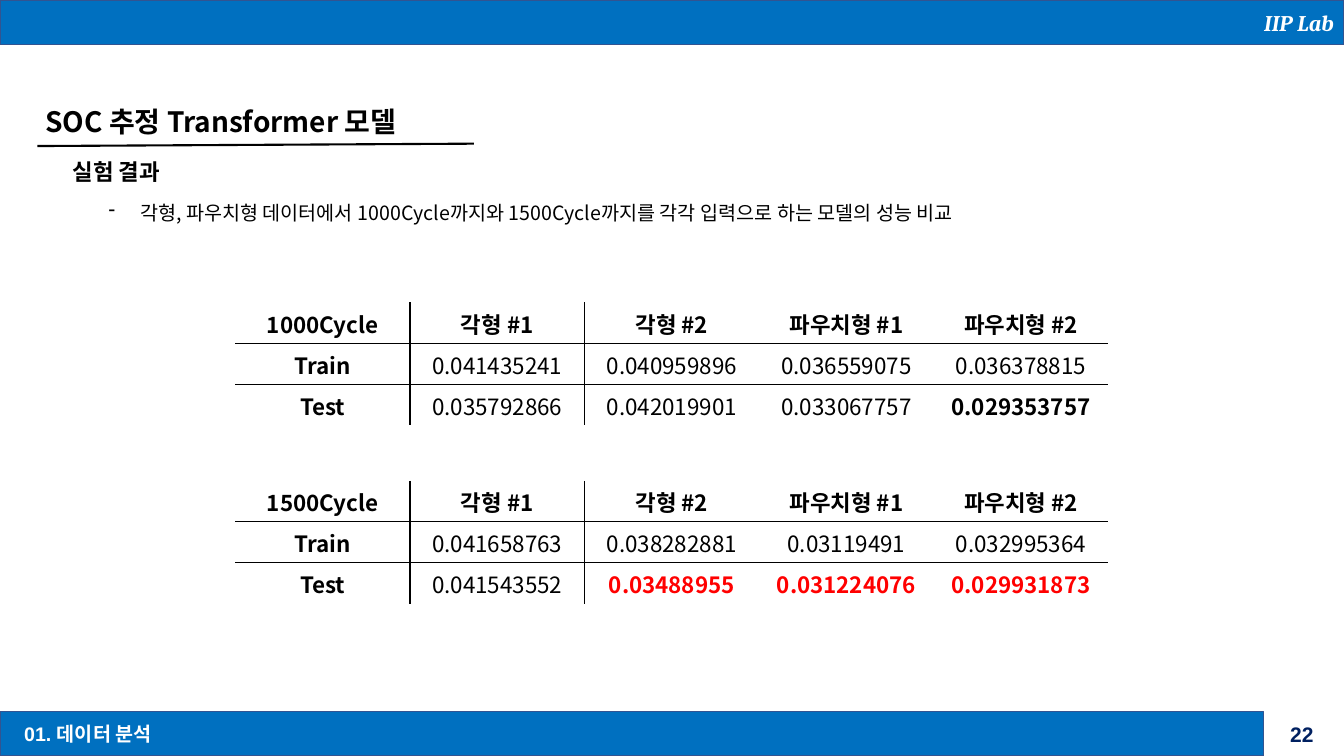
import dataclasses

import pptx
import pptx.dml.color
import pptx.enum.shapes
import pptx.enum.text
import pptx.oxml.ns
import pptx.util
from lxml import etree

Cm = pptx.util.Cm
Align = pptx.enum.text.PP_ALIGN
qn = pptx.oxml.ns.qn


@dataclasses.dataclass(frozen=True)
class Theme:
    """Colours, fonts and type sizes of the slide."""
    blue: str = "0070C0"
    edge: str = "325491"
    navy: str = "002060"
    white: str = "FFFFFF"
    black: str = "000000"
    red: str = "FF0000"
    body: str = "Noto Sans CJK KR"
    footer: str = "Arial"
    header: str = "Cambria"
    title_size: int = 20
    heading_size: int = 16
    number_size: int = 15
    text_size: int = 14


T = Theme()


def rgb(color):
    """Return the colour object for a hex string."""
    return pptx.dml.color.RGBColor.from_string(color)


def write(tf, text, size, color=T.black, font=T.body, bold=True, italic=False,
          align=Align.LEFT):
    """Add one styled run to the first paragraph and return the paragraph."""
    p = tf.paragraphs[0]
    p.alignment = align
    r = p.add_run()
    r.text = text
    r.font.size = pptx.util.Pt(size)
    r.font.name = font
    r.font.bold = bold
    r.font.italic = italic
    r.font.color.rgb = rgb(color)
    ea = etree.SubElement(r._r.get_or_add_rPr(), qn("a:ea"))
    ea.set("typeface", T.body)
    return p


def add_text(s, x, y, w, h, text, size, wrap=False, **style):
    """Place a text box and return its paragraph."""
    tf = s.shapes.add_textbox(Cm(x), Cm(y), Cm(w), Cm(h)).text_frame
    tf.word_wrap = wrap
    return write(tf, text, size, **style)


def add_bar(s, x, y, w, h):
    """Draw a blue band and return its text frame."""
    sp = s.shapes.add_shape(pptx.enum.shapes.MSO_SHAPE.RECTANGLE,
                            Cm(x), Cm(y), Cm(w), Cm(h))
    sp.shadow.inherit = False
    sp.fill.solid()
    sp.fill.fore_color.rgb = rgb(T.blue)
    sp.line.color.rgb = rgb(T.edge)
    sp.line.width = pptx.util.Pt(1)
    tf = sp.text_frame
    tf.vertical_anchor = pptx.enum.text.MSO_ANCHOR.MIDDLE
    return tf


def add_header(s, x, y, w, h):
    """Draw the top band with the lab name."""
    write(add_bar(s, x, y, w, h), "IIP Lab", T.heading_size, T.white, T.header,
          italic=True, align=Align.RIGHT)


def add_footer(s, x, y, w, h):
    """Draw the bottom band with the section name and the page number."""
    number_w = 2.02
    add_bar(s, x, y, w - number_w, h)
    add_text(s, x + 0.36, y + 0.13, 3.96, 0.86, "01. 데이터 분석", T.text_size,
             color=T.white, font=T.footer)
    add_text(s, x + w - number_w + 0.36, y + 0.13, 1.2, 0.89, "22",
             T.number_size, color=T.navy, font=T.footer, align=Align.CENTER)


def add_headings(s, x, y, w):
    """Place the underlined title, the subheading and the dash item."""
    add_text(s, x, y, w, 1.12, "SOC 추정 Transformer 모델", T.title_size, wrap=True)
    line = s.shapes.add_connector(pptx.enum.shapes.MSO_CONNECTOR.STRAIGHT,
                                  Cm(x + 0.05), Cm(y + 1.17),
                                  Cm(x + 11.05), Cm(y + 1.11))
    line.line.color.rgb = rgb(T.black)
    line.line.width = pptx.util.Pt(1.5)
    etree.SubElement(line._element.spPr, qn("a:effectLst"))
    add_text(s, x + 0.69, y + 1.35, 3, 0.94, "실험 결과", T.heading_size)
    p = add_text(s, x + 1.6, y + 2.42, 23.7, 0.86,
                 "각형, 파우치형 데이터에서 1000Cycle까지와 1500Cycle까지를 "
                 "각각 입력으로 하는 모델의 성능 비교", T.text_size, bold=False)
    pPr = p._p.get_or_add_pPr()
    pPr.set("marL", str(Cm(0.79)))
    pPr.set("indent", str(-Cm(0.79)))
    etree.SubElement(pPr, qn("a:buFontTx"))
    etree.SubElement(pPr, qn("a:buChar")).set("char", "-")


def set_borders(cell, drawn):
    """Draw the named sides of a cell in black and clear the others."""
    tcPr = cell._tc.get_or_add_tcPr()
    for side in "LRTB":
        ln = etree.SubElement(tcPr, qn(f"a:ln{side}"))
        ln.set("w", str(pptx.util.Pt(1)))
        if side in drawn:
            fill = etree.SubElement(ln, qn("a:solidFill"))
            etree.SubElement(fill, qn("a:srgbClr")).set("val", T.black)
        else:
            etree.SubElement(ln, qn("a:noFill"))


def add_results(s, x, y, w, h, cycle, train, test, best, best_color):
    """Place a result table whose test cells from column best on stand out."""
    rows = [[cycle, "각형 #1", "각형 #2", "파우치형 #1", "파우치형 #2"],
            ["Train", *train], ["Test", *test]]
    last = len(rows) - 1
    table = s.shapes.add_table(len(rows), len(rows[0]),
                               Cm(x), Cm(y), Cm(w), Cm(h)).table
    table.first_row = table.horz_banding = False
    for i, row in enumerate(rows):
        for j, text in enumerate(row):
            cell = table.cell(i, j)
            sides = {"L": j in (1, 2), "R": j in (0, 1), "T": i > 0, "B": i < last}
            set_borders(cell, [side for side, on in sides.items() if on])
            cell.fill.background()
            marked = i == last and j >= best
            write(cell.text_frame, text, T.heading_size,
                  best_color if marked else T.black,
                  bold=i == 0 or j == 0 or marked, align=Align.CENTER)


def main():
    """Build the slide and save it."""
    prs = pptx.Presentation()
    prs.slide_width, prs.slide_height = Cm(33.87), Cm(19.05)
    s = prs.slides.add_slide(prs.slide_layouts[6])
    add_header(s, 0, 0, 33.87, 1.12)
    add_footer(s, 0, 17.93, 33.87, 1.12)
    add_headings(s, 0.89, 2.51, 21.9)
    add_results(s, 5.93, 7.62, 22, 3.09, "1000Cycle",
                ["0.041435241", "0.040959896", "0.036559075", "0.036378815"],
                ["0.035792866", "0.042019901", "0.033067757", "0.029353757"],
                4, T.black)
    add_results(s, 5.93, 12.12, 22, 3.09, "1500Cycle",
                ["0.041658763", "0.038282881", "0.03119491", "0.032995364"],
                ["0.041543552", "0.03488955", "0.031224076", "0.029931873"],
                2, T.red)
    prs.save("out.pptx")


if __name__ == "__main__":
    main()
